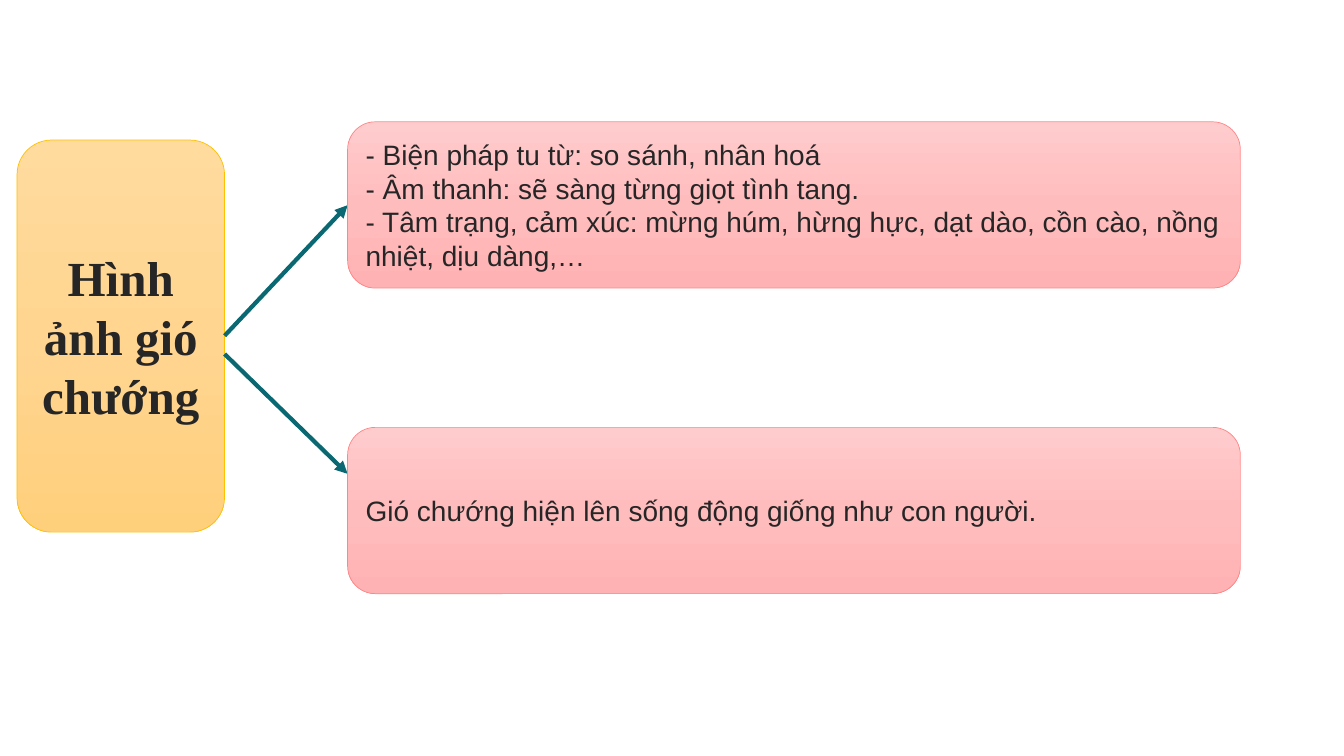
from copy import deepcopy

from lxml.etree import SubElement
from pptx import Presentation
from pptx.dml.color import RGBColor
from pptx.enum.shapes import MSO_CONNECTOR, MSO_SHAPE
from pptx.enum.text import MSO_ANCHOR, PP_ALIGN
from pptx.oxml.ns import qn
from pptx.util import Cm, Pt

INK = RGBColor(0x26, 0x26, 0x26)
TEAL = RGBColor(0x09, 0x68, 0x72)
AMBER = RGBColor(0xFF, 0xC0, 0x00)
CORAL = RGBColor(0xFF, 0x85, 0x87)
AMBER_FADE = [RGBColor(0xFF, 0xDB, 0x9E), RGBColor(0xFF, 0xD5, 0x90), RGBColor(0xFF, 0xD0, 0x7C)]
PINK_FADE = [RGBColor(0xFF, 0xCC, 0xCD), RGBColor(0xFF, 0xBC, 0xBD), RGBColor(0xFF, 0xB2, 0xB3)]

TOPIC_FONT = {"name": "Times New Roman", "size": Pt(35), "bold": True}
DETAIL_FONT = {"name": "Arial", "size": Pt(20), "bold": False}

# Boxes as left, top, width, height in centimetres
TOPIC_BOX = (0.43, 3.53, 5.23, 9.88)
DETAIL_BOXES = [(8.76, top, 22.5, 4.19) for top in (3.07, 10.77)]
DETAILS = [
    [
        "- Biện pháp tu từ: so sánh, nhân hoá",
        "- Âm thanh: sẽ sàng từng giọt tình tang.",
        "- Tâm trạng, cảm xúc: mừng húm, hừng hực, dạt dào, cồn cào, nồng nhiệt, dịu dàng,…",
    ],
    ["Gió chướng hiện lên sống động giống như con người."],
]
# Height at which each arrow leaves the topic, and its drop below the detail's top
ARROW_ENDS = [(8.46, 2.1), (8.92, 1.17)]


def fade_down(card, colours):
    """Fill a card with evenly spaced colours from top to bottom."""
    card.fill.gradient()
    card.fill.gradient_angle = 270
    stop_list = card.element.spPr.find(qn("a:gradFill")).find(qn("a:gsLst"))
    stop_list.insert(1, deepcopy(stop_list[0]))
    for index, (stop, colour) in enumerate(zip(card.fill.gradient_stops, colours)):
        stop.position = index / (len(colours) - 1)
        stop.color.rgb = colour


def add_card(slide, box, lines, font_format, align, colours, outline):
    """Place a rounded card with its text in the given box."""
    card = slide.shapes.add_shape(MSO_SHAPE.ROUNDED_RECTANGLE, *map(Cm, box))
    card.shadow.inherit = False
    fade_down(card, colours)
    card.line.color.rgb = outline
    card.line.width = Pt(0.5)
    content = card.text_frame
    content.word_wrap = True
    content.vertical_anchor = MSO_ANCHOR.MIDDLE
    content.text = "\n".join(lines)
    for paragraph in content.paragraphs:
        paragraph.alignment = align
        paragraph.font.color.rgb = INK
        for attribute, value in font_format.items():
            setattr(paragraph.font, attribute, value)


def add_arrow(slide, topic_box, detail_box, start_y, drop):
    """Join the topic's right side to the detail's left side."""
    left, _, width, _ = topic_box
    detail_left, detail_top, _, _ = detail_box
    ends = (left + width, start_y, detail_left, detail_top + drop)
    arrow = slide.shapes.add_connector(MSO_CONNECTOR.STRAIGHT, *map(Cm, ends))
    arrow.line.color.rgb = TEAL
    arrow.line.width = Pt(3)
    properties = arrow.element.spPr
    SubElement(properties.find(qn("a:ln")), qn("a:tailEnd"), type="triangle")
    SubElement(properties, qn("a:effectLst"))


def main():
    deck = Presentation()
    deck.slide_width, deck.slide_height = Cm(33.87), Cm(19.05)
    slide = deck.slides.add_slide(deck.slide_layouts[6])

    # Topic on the left
    add_card(slide, TOPIC_BOX, ["Hình ảnh gió chướng"], TOPIC_FONT,
             PP_ALIGN.CENTER, AMBER_FADE, AMBER)

    # Details on the right, each with its arrow
    for box, lines, arrow_ends in zip(DETAIL_BOXES, DETAILS, ARROW_ENDS):
        add_arrow(slide, TOPIC_BOX, box, *arrow_ends)
        add_card(slide, box, lines, DETAIL_FONT, PP_ALIGN.LEFT, PINK_FADE, CORAL)

    deck.save("out.pptx")


if __name__ == "__main__":
    main()
